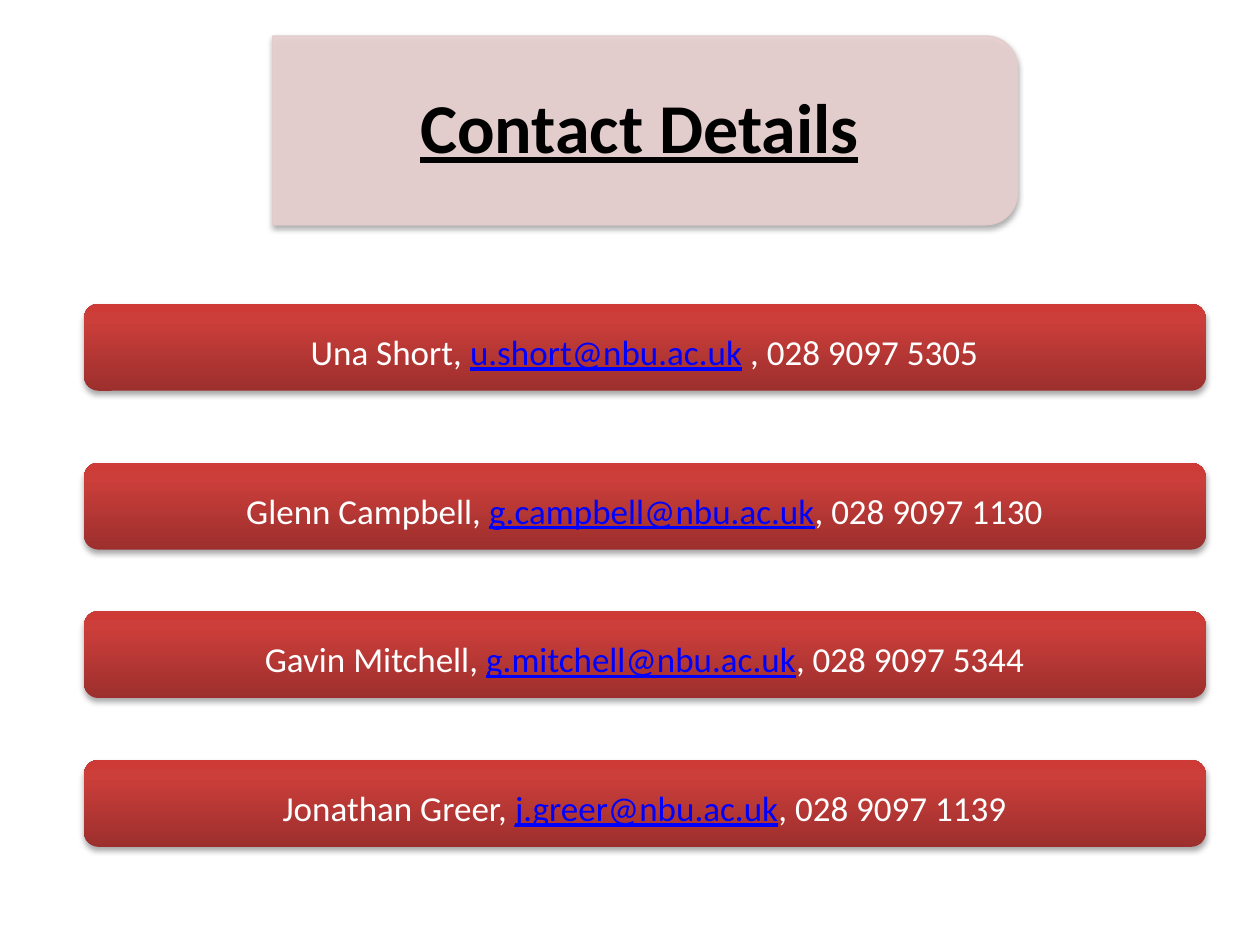
from copy import deepcopy

from lxml.etree import SubElement
from pptx import Presentation
from pptx.dml.color import RGBColor
from pptx.enum.shapes import MSO_SHAPE as Shape
from pptx.enum.text import MSO_ANCHOR as Anchor, PP_ALIGN as Align
from pptx.oxml.ns import qn
from pptx.util import Pt

color = RGBColor.from_string


def add_shadow(shape):
    """Give the shape a soft shadow that falls straight down."""
    shape.shadow.inherit = False
    effects = shape._element.spPr.find(qn("a:effectLst"))
    shadow = SubElement(effects, qn("a:outerShdw"), blurRad=str(Pt(3.15)),
                        dist=str(Pt(1.8)), dir="5400000", rotWithShape="0")
    black = SubElement(shadow, qn("a:srgbClr"), val="000000")
    SubElement(black, qn("a:alpha"), val="35000")


def add_label(slide, left, top, width, height, margin, parts, size):
    """Add one centred line; parts are (text, colour, underline, bold)."""
    label = slide.shapes.add_textbox(Pt(left), Pt(top), Pt(width), Pt(height))
    frame = label.text_frame
    frame.word_wrap = True
    frame.vertical_anchor = Anchor.MIDDLE
    frame.margin_left = frame.margin_right = Pt(margin)
    frame.margin_top = frame.margin_bottom = 0
    paragraph = frame.paragraphs[0]
    paragraph.alignment = Align.CENTER
    paragraph.line_spacing = 0.9
    for text, text_color, underline, bold in parts:
        run = paragraph.add_run()
        run.text = text
        run.font.name = "Calibri"
        run.font.size = Pt(size)
        run.font.color.rgb = color(text_color)
        run.font.underline = underline
        run.font.bold = bold


presentation = Presentation()
presentation.slide_width, presentation.slide_height = Pt(720), Pt(540)
slide = presentation.slides.add_slide(presentation.slide_layouts[6])

# Title panel, turned so that its rounded corners face right
panel = slide.shapes.add_shape(Shape.ROUND_2_SAME_RECTANGLE,
                               Pt(314.6), Pt(-138.2), Pt(108), Pt(425.5))
panel.rotation = 90
add_shadow(panel)
panel.fill.solid()
panel.fill.fore_color.rgb = color("E8D0D0")
panel.line.color.rgb = color("E3CBCB")
panel.line.width = Pt(0.75)
for panel_color in panel._element.spPr.iter(qn("a:srgbClr")):
    if panel_color.get("val") != "000000":
        SubElement(panel_color, qn("a:alpha"), val="90000")
add_label(slide, 156.2, 25.9, 418.3, 97.2, 5,
          [("Contact Details", "000000", True, True)], 40)

# One bar per contact
contacts = [
    (173.6, "Una Short, ", "u.short@nbu.ac.uk", " , 028 9097 5305"),
    (264.4, "Glenn Campbell, ", "g.campbell@nbu.ac.uk", ", 028 9097 1130"),
    (349.2, "Gavin Mitchell, ", "g.mitchell@nbu.ac.uk", ", 028 9097 5344"),
    (434.2, "Jonathan Greer, ", "j.greer@nbu.ac.uk", ", 028 9097 1139"),
]
bar_stops = [(0, "9C2F2D"), (0.8, "CB3E3A"), (1, "CE3B37")]

for top, name, email, phone in contacts:
    bar = slide.shapes.add_shape(Shape.ROUNDED_RECTANGLE,
                                 Pt(48), Pt(top), Pt(641), Pt(49.7))
    add_shadow(bar)
    bar.line.fill.background()
    bar.fill.gradient()
    bar.fill.gradient_angle = 90
    first_stop = bar._element.spPr.find(".//" + qn("a:gs"))
    first_stop.addnext(deepcopy(first_stop))
    for stop, (position, stop_color) in zip(bar.fill.gradient_stops, bar_stops):
        stop.position = position
        stop.color.rgb = color(stop_color)
    add_label(slide, 51.1, top + 6.4, 634.3, 44.6, 17.3,
              [(name, "FFFFFF", False, False),
               (email, "0000FF", True, False),
               (phone, "FFFFFF", False, False)], 20)

presentation.save("out.pptx")
